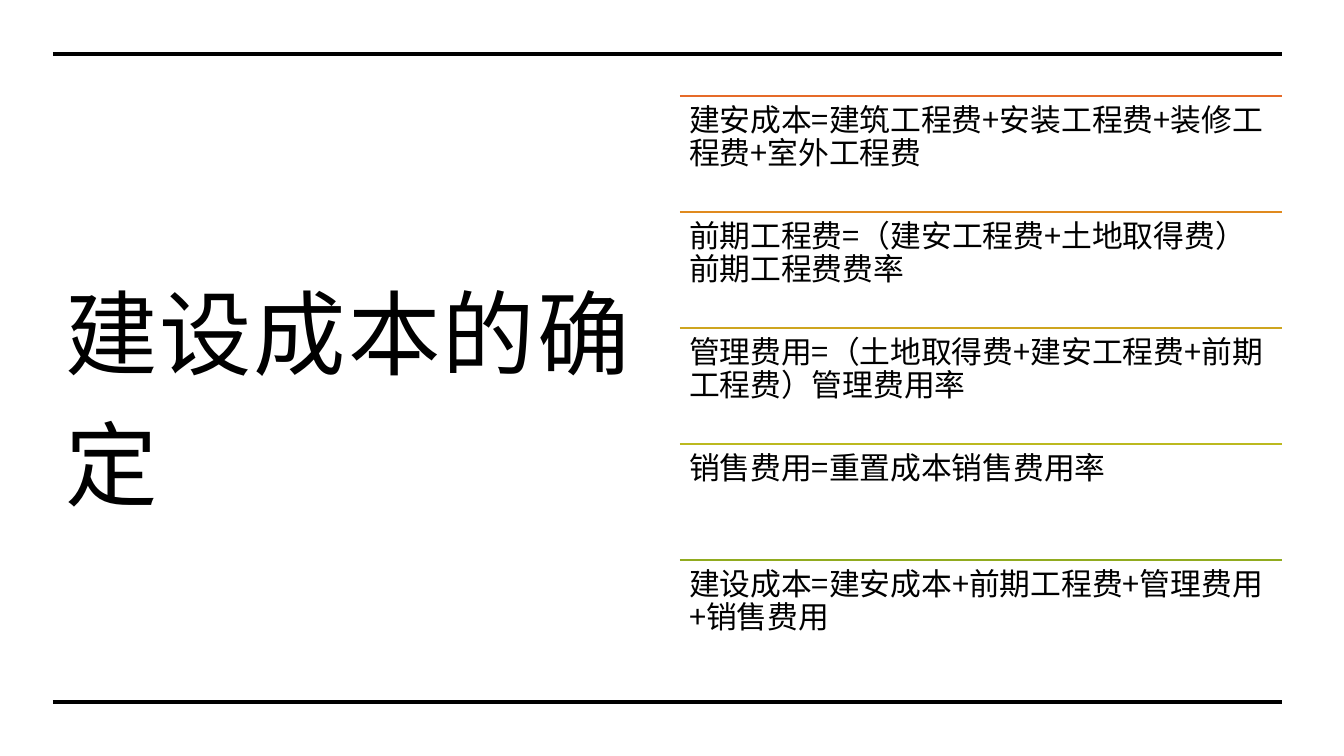
from lxml import etree
from pptx import Presentation
from pptx.dml.color import RGBColor
from pptx.enum.shapes import MSO_CONNECTOR
from pptx.enum.text import MSO_ANCHOR, MSO_AUTO_SIZE, PP_ALIGN
from pptx.oxml.ns import qn
from pptx.util import Emu, Pt

STRAIGHT = MSO_CONNECTOR.STRAIGHT
TOP, MIDDLE = MSO_ANCHOR.TOP, MSO_ANCHOR.MIDDLE
NO_FIT = MSO_AUTO_SIZE.NONE
LEFT = PP_ALIGN.LEFT

TITLE = "建设成本的确定"
ROWS = [
    ("建安成本=建筑工程费+安装工程费+装修工程费+室外工程费", "build"),
    ("前期工程费=（建安工程费+土地取得费）前期工程费费率", "early"),
    ("管理费用=（土地取得费+建安工程费+前期工程费）管理费用率", "manage"),
    ("销售费用=重置成本销售费用率", "sales"),
    ("建设成本=建安成本+前期工程费+管理费用+销售费用", "total"),
]
COLORS = {
    "ink": "000000",
    "build": "E66B29",
    "early": "E08A1E",
    "manage": "CEA51F",
    "sales": "BCB91F",
    "total": "91AB1F",
}
FONT = "Noto Sans CJK SC"
EDGE, END = 53, 1282
RULES = (54, 702)
HEAD_W = 619
LIST_X, LIST_Y = 680, 96
STEP = 116


def px(n):
    return Emu(round(n * 914400 / 100.8))


def rule(slide, left, y, color, width):
    line = slide.shapes.add_connector(STRAIGHT, px(left), px(y), px(END), px(y))
    line.line.color.rgb = RGBColor.from_string(COLORS[color])
    line.line.width = Pt(width)
    etree.SubElement(line._element.spPr, qn("a:effectLst"))


def write(shape, text, size, spacing, anchor, insets, track=0):
    frame = shape.text_frame
    frame.text = text
    frame.word_wrap = True
    frame.auto_size = NO_FIT
    frame.vertical_anchor = anchor
    (frame.margin_left, frame.margin_top,
     frame.margin_right, frame.margin_bottom) = map(px, insets)
    para = frame.paragraphs[0]
    para.alignment = LEFT
    para.line_spacing = spacing
    font = para.font
    font.name = FONT
    font.size = Pt(size)
    font.color.rgb = RGBColor.from_string(COLORS["ink"])
    props = para._p.pPr.find(qn("a:defRPr"))
    etree.SubElement(props, qn("a:ea"), typeface=FONT)
    if track:
        props.set("spc", str(track))


def main():
    deck = Presentation()
    deck.slide_width, deck.slide_height = px(1344), px(756)
    slide = deck.slides.add_slide(deck.slide_layouts[5])

    head = slide.shapes.title
    head.left, head.top = px(EDGE), px(LIST_Y)
    head.width, head.height = px(HEAD_W), px(STEP * len(ROWS))
    write(head, TITLE, 66, 1.18, MIDDLE, (12, 12, 12, 10), 150)

    for y in RULES:
        rule(slide, EDGE, y, "ink", 2.25)

    for i, (text, color) in enumerate(ROWS):
        y = LIST_Y + i * STEP
        rule(slide, LIST_X, y, color, 1)
        box = slide.shapes.add_textbox(
            px(LIST_X), px(y), px(END - LIST_X), px(STEP))
        write(box, text, 22, 0.9, TOP, (9, 9, 9, 9))

    deck.save("out.pptx")


if __name__ == "__main__":
    main()
